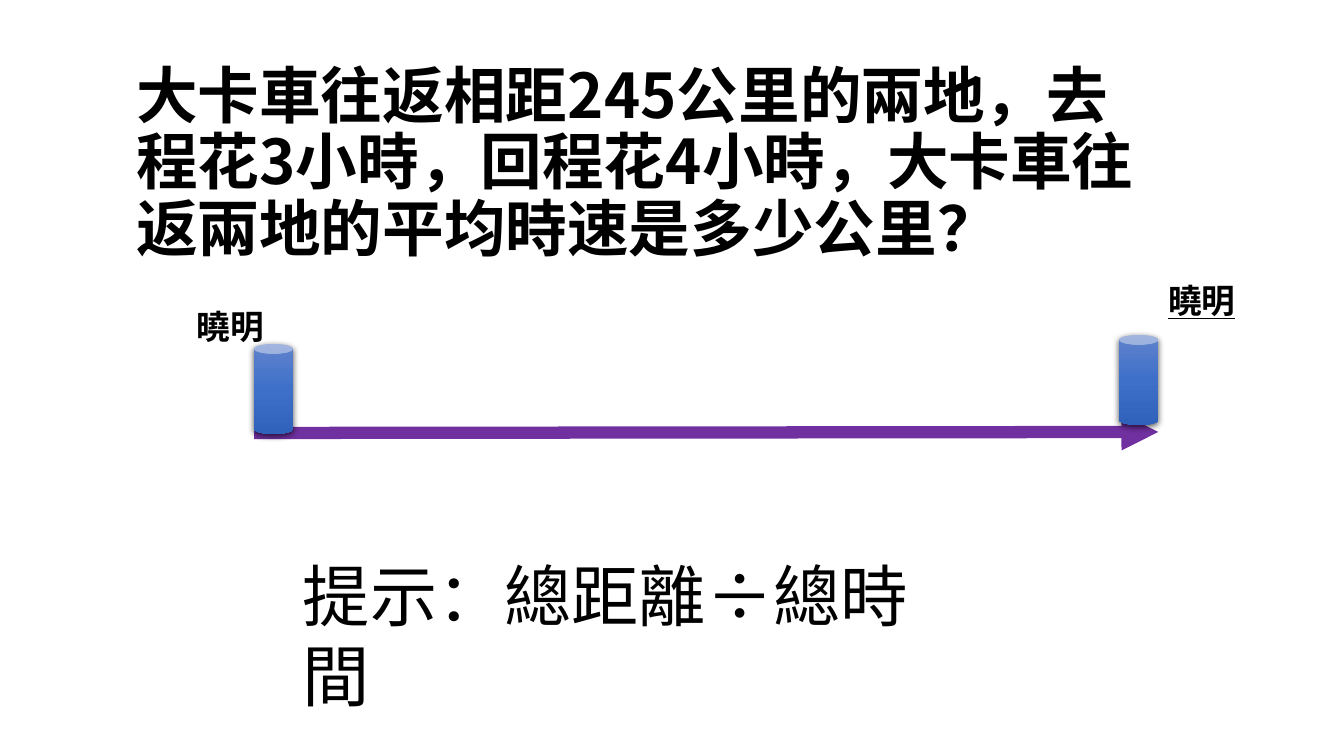
from copy import deepcopy
from lxml import etree
from pptx import Presentation
from pptx import util as u
from pptx.dml.color import RGBColor
from pptx.enum import shapes, text
from pptx.oxml.ns import qn

# Content: lengths in px
FONT = "Noto Sans CJK SC"
TITLE = "大卡車往返相距245公里的兩地，去程花3小時，回程花4小時，大卡車往返兩地的平均時速是多少公里？"
TITLE_BOX = (126, 92, 1052, 146)
ROAD = (254, 433, 1158, 432)
POSTS = [(254, 344), (1119, 335)]
POST_SIZE = (39, 90)
SHADES = [(0, "6183CB"), (0.5, "3E70CA"), (1, "3062BB")]
# text, box, size, bold, underline, wrap
LABELS = [
    ("曉明", (187, 301, 89, 50), 24, True, False, False),
    ("曉明", (1158, 275, 89, 50), 24, True, True, False),
    ("提示：總距離÷總時間", (293, 549, 681, 92), 48, False, False, True),
]
SCALE = 914400 / 100.8


def px(*vals):
    return [u.Emu(round(v * SCALE)) for v in vals]


def rgb(code):
    return RGBColor.from_string(code)


def write(frame, words, size, bold, line=False):
    para = frame.paragraphs[0]
    run = para.add_run()
    run.text = words
    font = run.font
    font.name, font.size, font.bold = FONT, u.Pt(size), bold
    font.underline = line or None
    font.color.rgb = rgb("000000")
    east = etree.SubElement(run._r.get_or_add_rPr(), qn("a:ea"))
    east.set("typeface", FONT)
    return para


def effects(shape):
    return etree.SubElement(shape._element.spPr, qn("a:effectLst"))


def shade(shape):
    """Three-stop vertical gradient with a soft shadow below."""
    shape.fill.gradient()
    shape.fill.gradient_angle = 270
    stops = shape._element.spPr.find(qn("a:gradFill")).find(qn("a:gsLst"))
    stops.insert(1, deepcopy(stops[0]))
    for stop, (place, code) in zip(shape.fill.gradient_stops, SHADES):
        stop.position = place
        stop.color.rgb = rgb(code)
    shape.line.fill.background()
    glow = etree.SubElement(effects(shape), qn("a:outerShdw"),
                            blurRad=str(u.Pt(4.5)), dist=str(u.Pt(1.5)),
                            dir="5400000", algn="ctr", rotWithShape="0")
    tint = etree.SubElement(glow, qn("a:srgbClr"), val="000000")
    etree.SubElement(tint, qn("a:alpha"), val="63000")


def main():
    deck = Presentation()
    deck.slide_width, deck.slide_height = u.Inches(13.33), u.Inches(7.5)
    slide = deck.slides.add_slide(deck.slide_layouts[5])
    items = slide.shapes

    # Title
    head = items.title
    head.left, head.top, head.width, head.height = px(*TITLE_BOX)
    frame = head.text_frame
    frame.word_wrap = True
    frame.auto_size = text.MSO_AUTO_SIZE.NONE
    frame.vertical_anchor = text.MSO_ANCHOR.MIDDLE
    para = write(frame, TITLE, 44, True)
    para.alignment = text.PP_ALIGN.LEFT
    para.line_spacing = 0.9

    # Road arrow
    road = items.add_connector(shapes.MSO_CONNECTOR.STRAIGHT, *px(*ROAD))
    road.line.color.rgb = rgb("7030A0")
    road.line.width = u.Pt(8.75)
    etree.SubElement(road.line._get_or_add_ln(), qn("a:tailEnd"), type="triangle")
    effects(road)

    # Posts at both ends
    for spot in POSTS:
        shade(items.add_shape(shapes.MSO_SHAPE.CAN, *px(*spot, *POST_SIZE)))

    # Names and hint
    for words, box, size, bold, line, wrap in LABELS:
        frame = items.add_textbox(*px(*box)).text_frame
        frame.word_wrap = wrap
        frame.auto_size = text.MSO_AUTO_SIZE.SHAPE_TO_FIT_TEXT
        write(frame, words, size, bold, line)

    deck.save("out.pptx")


if __name__ == "__main__":
    main()
